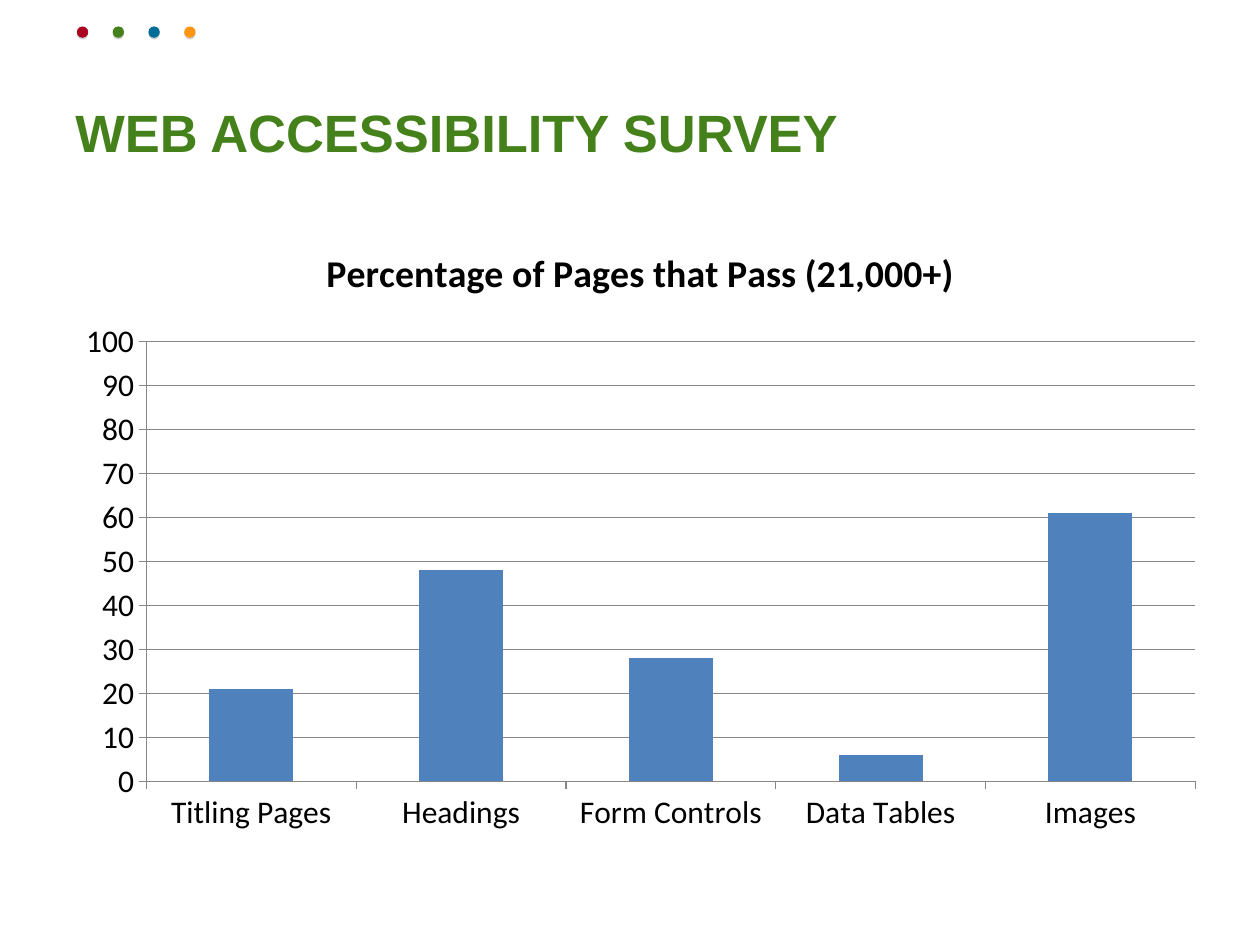
from lxml import etree
from pptx import Presentation
from pptx.chart.data import CategoryChartData
from pptx.dml.color import RGBColor
from pptx.enum import chart as ch, shapes, text
from pptx.oxml import ns
from pptx.util import Inches, Pt

TITLE = "WEB ACCESSIBILITY SURVEY"
CHART_TITLE = "Percentage of Pages that Pass (21,000+)"
PASS_RATES = {
    "Titling Pages": 21,
    "Headings": 48,
    "Form Controls": 28,
    "Data Tables": 6,
    "Images": 61,
}
DOT_COLORS = ["A90021", "45811B", "006D97", "FD9712"]
GREEN, BLUE, GRAY, BLACK = "45811B", "4F81BD", "868686", "000000"
LEFT, WIDTH = 0.5, 9.17
DOT_LEFT, DOT_TOP, DOT_SIZE, DOT_STEP = 0.61, 0.21, 0.09, 0.284


def rgb(value):
    return RGBColor.from_string(value)


def set_font(font, name, size, color, bold=False):
    font.name, font.size, font.bold = name, Pt(size), bold
    font.color.rgb = rgb(color)


def add_dot(s, left, color):
    sp = s.shapes.add_shape(shapes.MSO_SHAPE.OVAL, Inches(left), Inches(DOT_TOP),
                            Inches(DOT_SIZE), Inches(DOT_SIZE))
    sp.fill.solid()
    sp.fill.fore_color.rgb = rgb(color)
    sp.line.fill.background()
    sp.shadow.inherit = False
    effects = sp._element.spPr.find(ns.qn("a:effectLst"))
    shadow = etree.SubElement(effects, ns.qn("a:outerShdw"), blurRad="0",
                              dist=str(Pt(1)), dir="5400000", rotWithShape="0")
    tint = etree.SubElement(shadow, ns.qn("a:srgbClr"), val="808080")
    etree.SubElement(tint, ns.qn("a:alpha"), val="35000")


def add_title(s):
    sp = s.shapes.add_textbox(Inches(LEFT), Inches(0.42), Inches(WIDTH), Inches(1.25))
    tf = sp.text_frame
    tf.word_wrap = True
    tf.vertical_anchor = text.MSO_ANCHOR.MIDDLE
    p = tf.paragraphs[0]
    p.text = TITLE
    set_font(p.font, "Arial", 30, GREEN, True)


def add_survey_chart(s):
    data = CategoryChartData()
    data.categories = list(PASS_RATES)
    data.add_series("Series 1", list(PASS_RATES.values()))
    chart = s.shapes.add_chart(ch.XL_CHART_TYPE.COLUMN_CLUSTERED, Inches(LEFT), Inches(1.75),
                               Inches(WIDTH), Inches(4.95), data).chart
    set_font(chart.font, "Calibri", 18, BLACK)
    chart.has_legend = False
    chart.has_title = True
    p = chart.chart_title.text_frame.paragraphs[0]
    p.text = CHART_TITLE
    set_font(p.font, "Calibri", 21.6, BLACK, True)

    plot = chart.plots[0]
    plot.gap_width = 150
    plot.vary_by_categories = False
    fill = plot.series[0].format.fill
    fill.solid()
    fill.fore_color.rgb = rgb(BLUE)

    values = chart.value_axis
    values.minimum_scale, values.maximum_scale, values.major_unit = 0, 100, 10
    values.has_major_gridlines = True
    for axis in (chart.category_axis, values):
        axis.major_tick_mark = ch.XL_TICK_MARK.OUTSIDE
        axis.minor_tick_mark = ch.XL_TICK_MARK.NONE
    for part in (chart.category_axis, values, values.major_gridlines):
        part.format.line.color.rgb = rgb(GRAY)
        part.format.line.width = Pt(0.75)


def main():
    prs = Presentation()
    prs.slide_width, prs.slide_height = Inches(10), Inches(7.5)
    s = prs.slides.add_slide(prs.slide_layouts[6])
    for i, color in enumerate(DOT_COLORS):
        add_dot(s, DOT_LEFT + i * DOT_STEP, color)
    add_title(s)
    add_survey_chart(s)
    prs.save("out.pptx")


if __name__ == "__main__":
    main()
